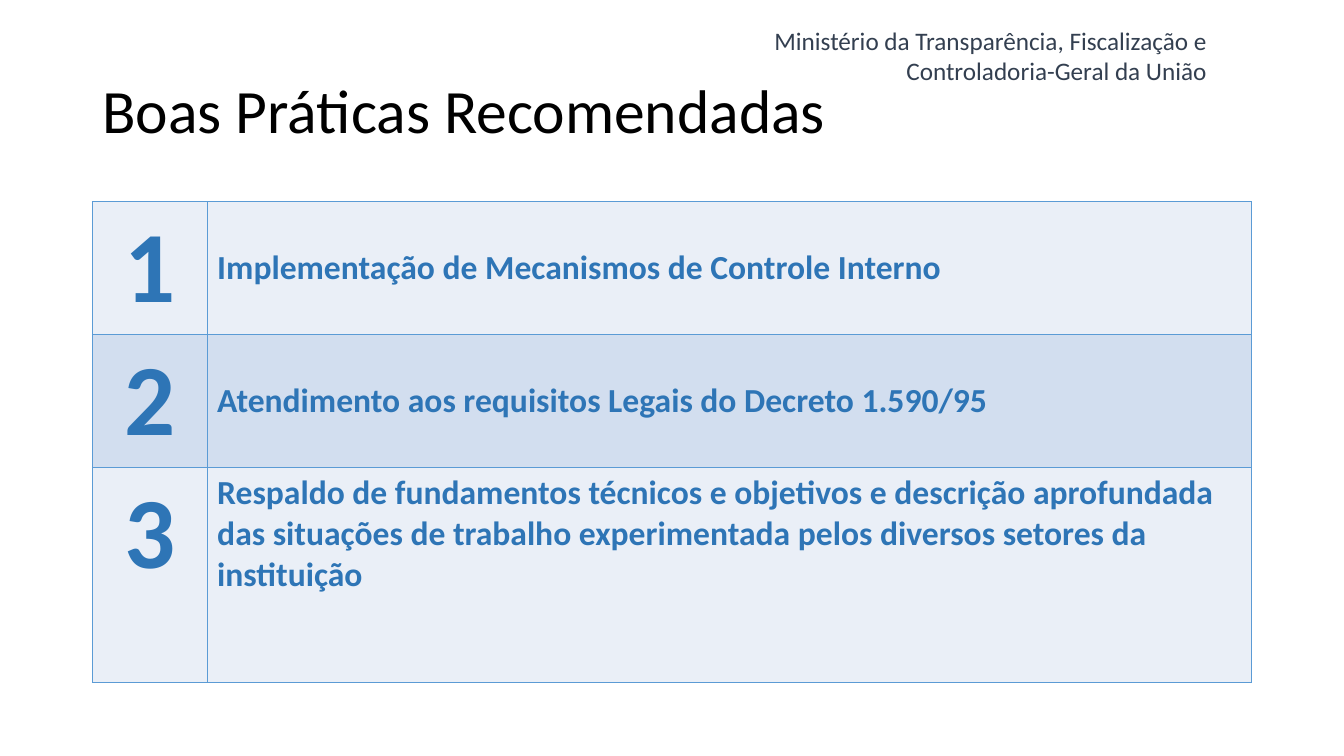
from lxml import etree
from pptx import Presentation
from pptx.dml.color import RGBColor
from pptx.enum import text
from pptx.oxml import ns
from pptx.util import Pt

FONT = "Calibri"
PRACTICES = [
    ("Implementação de Mecanismos de Controle Interno", 95, "EAEFF7", text.MSO_ANCHOR.MIDDLE),
    ("Atendimento aos requisitos Legais do Decreto 1.590/95", 95, "D2DEEF", text.MSO_ANCHOR.MIDDLE),
    ("Respaldo de fundamentos técnicos e objetivos e descrição aprofundada das situações "
     "de trabalho experimentada pelos diversos setores da instituição",
     153.5, "EAEFF7", text.MSO_ANCHOR.TOP),
]


def color(value):
    return RGBColor.from_string(value)


def format_paragraph(paragraph, size, value, alignment, bold=False):
    paragraph.alignment = alignment
    font = paragraph.font
    font.name, font.size, font.bold = FONT, Pt(size), bold
    font.color.rgb = color(value)


def add_ministry(slide, left, top, width, height):
    shape = slide.shapes.add_textbox(Pt(left), Pt(top), Pt(width), Pt(height))
    frame = shape.text_frame
    frame.word_wrap = True
    frame.text = "Ministério da Transparência, Fiscalização e Controladoria-Geral da União"
    format_paragraph(frame.paragraphs[0], 18, "333F50", text.PP_ALIGN.RIGHT)


def place_title(slide, left, top, width, height):
    title = slide.shapes.title
    title.left, title.top, title.width, title.height = map(Pt, (left, top, width, height))
    frame = title.text_frame
    frame.text = "Boas Práticas Recomendadas"
    frame.auto_size = text.MSO_AUTO_SIZE.NONE
    frame.vertical_anchor = text.MSO_ANCHOR.MIDDLE
    paragraph = frame.paragraphs[0]
    paragraph.line_spacing = 0.9
    format_paragraph(paragraph, 44, "000000", text.PP_ALIGN.LEFT)


def add_borders(cell, value, width):
    properties = cell._tc.get_or_add_tcPr()
    for side in ("lnL", "lnR", "lnT", "lnB"):
        line = etree.SubElement(properties, ns.qn(f"a:{side}"), w=str(Pt(width)))
        fill = etree.SubElement(line, ns.qn("a:solidFill"))
        etree.SubElement(fill, ns.qn("a:srgbClr"), val=value)


def fill_cell(cell, content, size, alignment, anchor, background):
    add_borders(cell, "5B9BD5", 1)
    cell.fill.solid()
    cell.fill.fore_color.rgb = color(background)
    cell.vertical_anchor = anchor
    cell.text = content
    format_paragraph(cell.text_frame.paragraphs[0], size, "2E75B6", alignment, True)


def add_practices(slide, left, top, width):
    number_width = 82
    height = sum(practice[1] for practice in PRACTICES)
    table = slide.shapes.add_table(
        len(PRACTICES), 2, Pt(left), Pt(top), Pt(width), Pt(height)).table
    table.first_row = table.horz_banding = False
    table.columns[0].width = Pt(number_width)
    table.columns[1].width = Pt(width - number_width)
    for index, (practice, row_height, background, anchor) in enumerate(PRACTICES):
        table.rows[index].height = Pt(row_height)
        fill_cell(table.cell(index, 0), str(index + 1), 72,
                  text.PP_ALIGN.CENTER, text.MSO_ANCHOR.TOP, background)
        fill_cell(table.cell(index, 1), practice, 24,
                  text.PP_ALIGN.LEFT, anchor, background)


def main():
    presentation = Presentation()
    presentation.slide_width, presentation.slide_height = Pt(960), Pt(540)
    slide = presentation.slides.add_slide(presentation.slide_layouts[5])
    add_ministry(slide, 540.5, 14.5, 328.5, 51)
    place_title(slide, 66, 29, 828, 104.5)
    add_practices(slide, 66, 144, 828)
    presentation.save("out.pptx")


if __name__ == "__main__":
    main()
